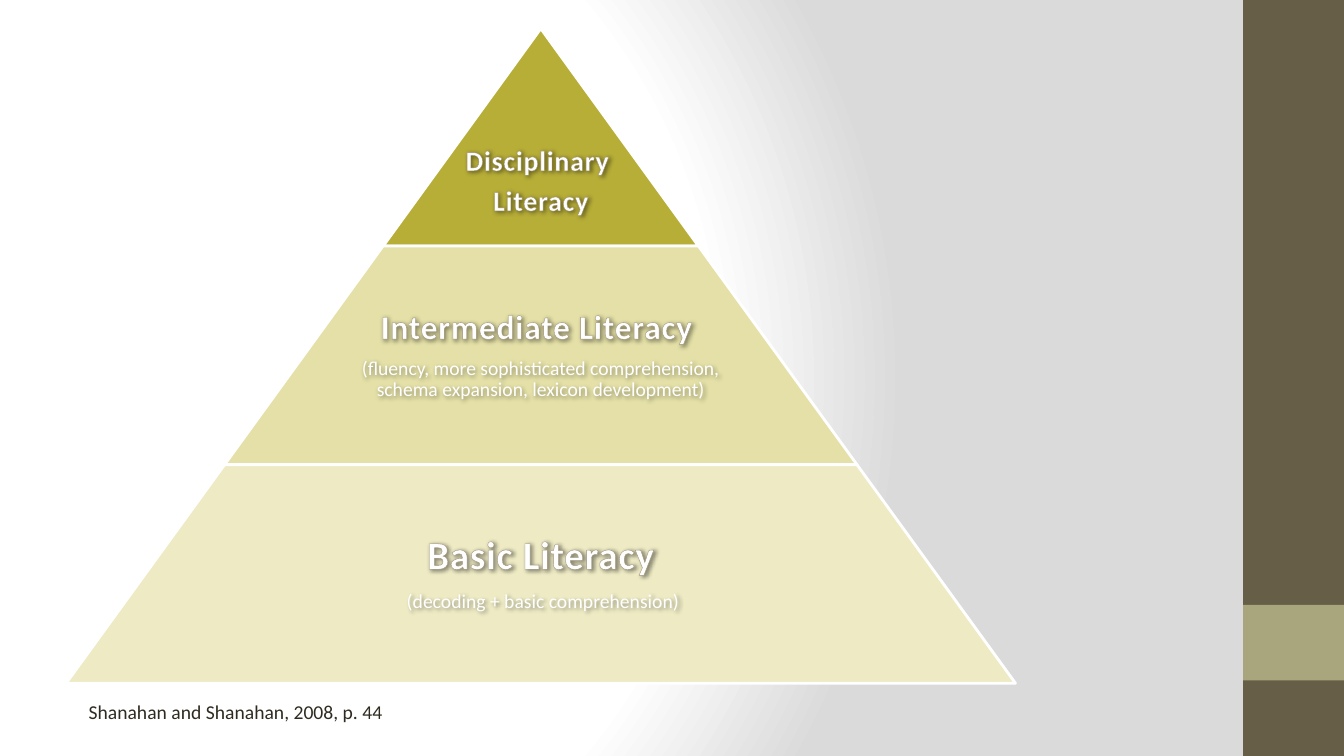
import pptx
import pptx.dml.color
import pptx.enum.shapes
import pptx.enum.text
import pptx.oxml
import pptx.oxml.ns
import pptx.util

Pt = pptx.util.Pt
Shapes = pptx.enum.shapes.MSO_SHAPE
Align = pptx.enum.text.PP_ALIGN
Anchor = pptx.enum.text.MSO_ANCHOR

# Each tier: height, fill, text width as a share of the tier, inset, top inset,
# and lines of (text, size, is heading).
TIERS = [
    (155.3, "B7AE38", 1, 1.5, 65,
     [("Disciplinary ", 20, True), ("Literacy", 20, True)]),
    (156.2, "E4E0A7", 0.65, 2, 2,
     [("Intermediate Literacy ", 24, True),
      ("(fluency, more sophisticated comprehension, "
       "schema expansion, lexicon development)", 14, False)]),
    (156.2, "EDEAC4", 0.65, 3, 3,
     [("Basic Literacy", 28, True),
      (" (decoding + basic comprehension)", 14, False)]),
]
CITATION = "Shanahan and Shanahan, 2008, p. 44"
SIDEBAR = [(0, 540, "675E47"), (432, 54, "A9A57C")]  # top, height, fill
BACKGROUND_STOPS = [(0, "FFFFFF"), (75, "FFFFFF"), (100, "DADADA")]

APEX_X, APEX_Y = 386.3, 20.4
SLOPE = 0.725  # sideways run of a pyramid edge per point of height
SIDEBAR_LEFT, SIDEBAR_WIDTH = 888, 72
NS = pptx.oxml.ns.nsdecls("a")


def rgb(value):
    return pptx.dml.color.RGBColor.from_string(value)


def add_block(kind, left, top, width, height, fill, line=None):
    block = slide.shapes.add_shape(kind, Pt(left), Pt(top), Pt(width), Pt(height))
    block.shadow.inherit = False
    block.fill.solid()
    block.fill.fore_color.rgb = rgb(fill)
    if line:
        block.line.color.rgb = rgb(line)
        block.line.width = Pt(2)
    else:
        block.line.fill.background()
    return block


def add_heading_outline(run):
    """Give a heading its thin outline and letter spacing."""
    props = run.font._element
    props.set("spc", "50")
    props.insert(0, pptx.oxml.parse_xml(
        f'<a:ln {NS} w="6350"><a:solidFill><a:srgbClr val="A49279"/>'
        '</a:solidFill></a:ln>'))


def add_text_shadow(box):
    """Shade the text of an unfilled box through the shadow of the box."""
    box._element.spPr.append(pptx.oxml.parse_xml(
        f'<a:effectLst {NS}><a:outerShdw blurRad="38100" dist="19050" dir="2700000" '
        'algn="tl" rotWithShape="0"><a:srgbClr val="000000"><a:alpha val="40000"/>'
        '</a:srgbClr></a:outerShdw></a:effectLst>'))


def add_text(lines, left, top, width, height, color, inset=None, top_inset=None,
             centered=False, wrap=True, shaded=False):
    box = slide.shapes.add_textbox(Pt(left), Pt(top), Pt(width), Pt(height))
    if shaded:
        add_text_shadow(box)
    frame = box.text_frame
    frame.word_wrap = wrap
    if inset is not None:
        frame.margin_left = frame.margin_right = frame.margin_bottom = Pt(inset)
        frame.margin_top = Pt(top_inset)
    if centered:
        frame.vertical_anchor = Anchor.MIDDLE
    for index, (text, size, heading) in enumerate(lines):
        paragraph = frame.add_paragraph() if index else frame.paragraphs[0]
        if centered:
            paragraph.alignment = Align.CENTER
            paragraph.line_spacing = 0.9
            paragraph.space_after = Pt(0.35 * size)
        run = paragraph.add_run()
        run.text = text
        run.font.name = "Calibri"
        run.font.size = Pt(size)
        run.font.bold = heading
        run.font.color.rgb = rgb(color)
        if heading:
            add_heading_outline(run)


def set_background():
    """Fill the slide with a round gradient centred left of the middle."""
    fill = slide.background.fill
    fill.solid()
    solid = slide._element.find(".//" + pptx.oxml.ns.qn("p:bgPr"))[0]
    stops = "".join(f'<a:gs pos="{at * 1000}"><a:srgbClr val="{color}"/></a:gs>'
                    for at, color in BACKGROUND_STOPS)
    solid.getparent().replace(solid, pptx.oxml.parse_xml(
        f'<a:gradFill {NS} rotWithShape="1"><a:gsLst>{stops}</a:gsLst>'
        '<a:path path="circle"><a:fillToRect l="20000" t="50000" r="100000" b="50000"/>'
        '</a:path></a:gradFill>'))


deck = pptx.Presentation()
deck.slide_width, deck.slide_height = Pt(960), Pt(540)
slide = deck.slides.add_slide(deck.slide_layouts[6])
set_background()

for top, height, fill in SIDEBAR:
    add_block(Shapes.RECTANGLE, SIDEBAR_LEFT, top, SIDEBAR_WIDTH, height, fill)

depth = 0
for height, fill, share, inset, top_inset, lines in TIERS:
    top = APEX_Y + depth
    depth += height
    width = 2 * SLOPE * depth
    tier = add_block(Shapes.TRAPEZOID, APEX_X - width / 2, top, width, height,
                     fill, line="FFFFFF")
    tier.adjustments[0] = SLOPE
    text_width = width * share
    add_text(lines, APEX_X - text_width / 2, top, text_width, height, "FFFFFF",
             inset=inset, top_inset=top_inset, centered=True, shaded=True)

add_text([(CITATION, 14, False)], 56.2, 496.3, 255, 24.5, "2F2B20", wrap=False)

deck.save("out.pptx")
